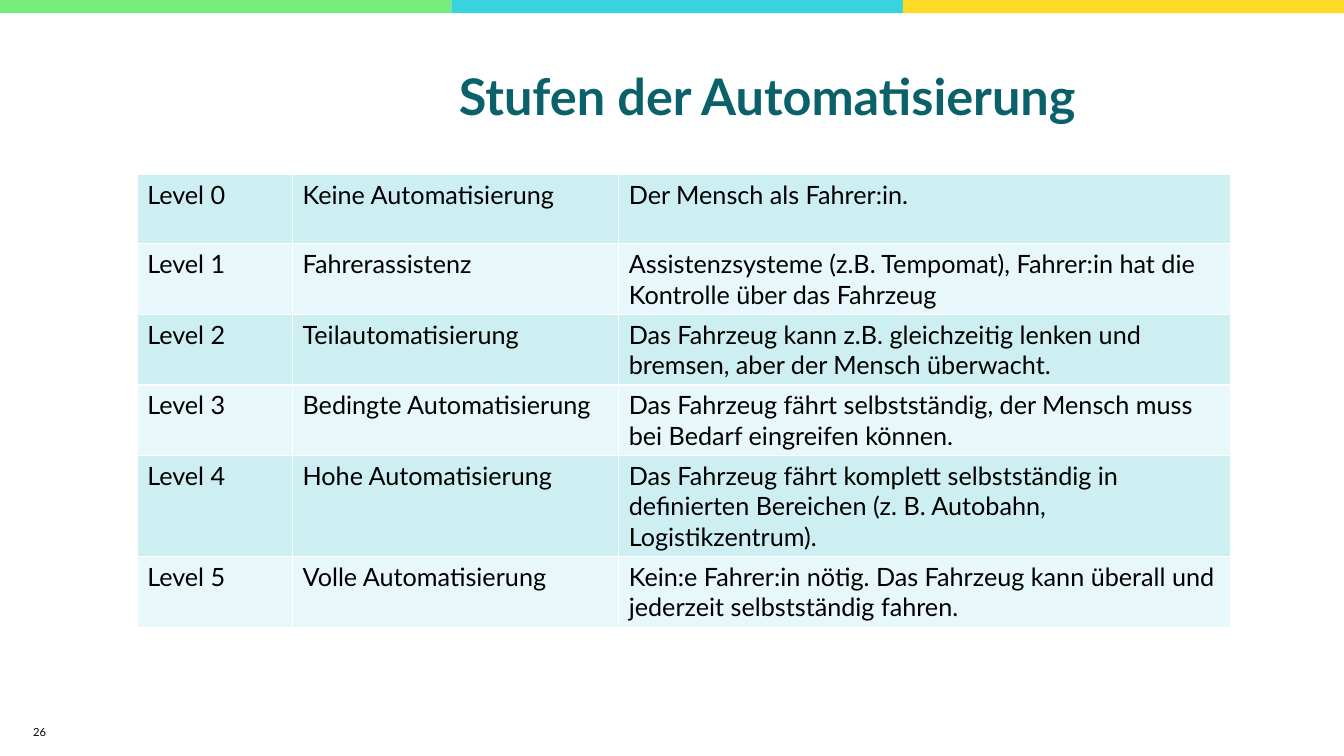
from dataclasses import dataclass

from lxml import etree
from pptx import Presentation
from pptx import util as u
from pptx.dml.color import RGBColor
from pptx.enum import shapes, text
from pptx.oxml import ns


@dataclass(frozen=True)
class Theme:
    font: str = "Lato"
    ink: str = "000000"
    heading: str = "0A6169"
    border: str = "FFFFFF"
    bars: tuple = ("77ED7D", "39D3DD", "FCDA28")
    bands: tuple = ("CEEFF2", "E8F7F9")
    title_size: int = 36
    body_size: int = 18
    number_size: int = 8


def write(frame, words, *, theme, size, color, bold=False,
          align=text.PP_ALIGN.LEFT, anchor=None, spacing=None):
    frame.word_wrap = True
    if anchor is not None:
        frame.vertical_anchor = anchor
    para = frame.paragraphs[0]
    para.alignment = align
    if spacing:
        para.line_spacing = spacing
    span = para.add_run()
    span.text = words
    span.font.name = theme.font
    span.font.size = u.Pt(size)
    span.font.bold = bold
    span.font.color.rgb = RGBColor.from_string(color)


class SlideBuilder:
    def __init__(self, page, theme):
        self.page = page
        self.theme = theme

    def bar(self, left, top, width, height, color):
        box = self.page.shapes.add_shape(
            shapes.MSO_SHAPE.RECTANGLE, *map(u.Pt, (left, top, width, height)))
        box.shadow.inherit = False
        box.fill.solid()
        box.fill.fore_color.rgb = RGBColor.from_string(color)
        box.line.fill.background()

    def title(self, words, left, top, width, height):
        box = self.page.shapes.title
        box.left, box.top, box.width, box.height = map(u.Pt, (left, top, width, height))
        write(box.text_frame, words, theme=self.theme, size=self.theme.title_size,
              color=self.theme.heading, bold=True,
              anchor=text.MSO_ANCHOR.MIDDLE, spacing=0.9)

    def page_number(self, words, left, top, width, height):
        box = self.page.shapes.add_textbox(*map(u.Pt, (left, top, width, height)))
        write(box.text_frame, words, theme=self.theme, size=self.theme.number_size,
              color=self.theme.ink, align=text.PP_ALIGN.RIGHT,
              anchor=text.MSO_ANCHOR.MIDDLE)

    def table(self, rows, left, top, widths, row_height):
        frame = self.page.shapes.add_table(
            len(rows), len(widths), u.Pt(left), u.Pt(top),
            u.Pt(sum(widths)), u.Pt(row_height * len(rows)))
        grid = frame.table
        grid.first_row = False
        grid.horz_banding = False
        for column, width in zip(grid.columns, widths):
            column.width = u.Pt(width)
        for index, row in enumerate(rows):
            grid.rows[index].height = u.Pt(row_height)
            band = self.theme.bands[index % len(self.theme.bands)]
            for column, words in enumerate(row):
                self.cell(grid.cell(index, column), words, band)

    def cell(self, cell, words, color):
        write(cell.text_frame, words, theme=self.theme,
              size=self.theme.body_size, color=self.theme.ink)
        properties = cell._tc.get_or_add_tcPr()
        for side in ("a:lnL", "a:lnR", "a:lnT", "a:lnB"):
            line = etree.SubElement(properties, ns.qn(side), w=str(u.Pt(1)))
            fill = etree.SubElement(line, ns.qn("a:solidFill"))
            etree.SubElement(fill, ns.qn("a:srgbClr"), val=self.theme.border)
        cell.fill.solid()
        cell.fill.fore_color.rgb = RGBColor.from_string(color)


LEVELS = (
    ("Keine Automatisierung", "Der Mensch als Fahrer:in."),
    ("Fahrerassistenz",
     "Assistenzsysteme (z.B. Tempomat), Fahrer:in hat die Kontrolle über das Fahrzeug"),
    ("Teilautomatisierung",
     "Das Fahrzeug kann z.B. gleichzeitig lenken und bremsen, aber der Mensch überwacht."),
    ("Bedingte Automatisierung",
     "Das Fahrzeug fährt selbstständig, der Mensch muss bei Bedarf eingreifen können."),
    ("Hohe Automatisierung",
     "Das Fahrzeug fährt komplett selbstständig in definierten Bereichen "
     "(z. B. Autobahn, Logistikzentrum)."),
    ("Volle Automatisierung",
     "Kein:e Fahrer:in nötig. Das Fahrzeug kann überall und jederzeit selbstständig fahren."),
)


def main():
    deck = Presentation()
    deck.slide_width, deck.slide_height = u.Pt(960), u.Pt(540)
    theme = Theme()
    builder = SlideBuilder(deck.slides.add_slide(deck.slide_layouts[5]), theme)

    bar_width = 322.5
    for index, color in enumerate(theme.bars):
        left = index * bar_width
        builder.bar(left, 0, min(bar_width, 960 - left), 9.4, color)

    builder.page_number("26", 5, 508.5, 35, 28.5)
    builder.title("Stufen der Automatisierung", 320.5, 27.5, 606, 86.5)
    rows = [(f"Level {number}", *level) for number, level in enumerate(LEVELS)]
    builder.table(rows, 98, 124.7, (111, 233, 437), 49.5)

    deck.save("out.pptx")


if __name__ == "__main__":
    main()
